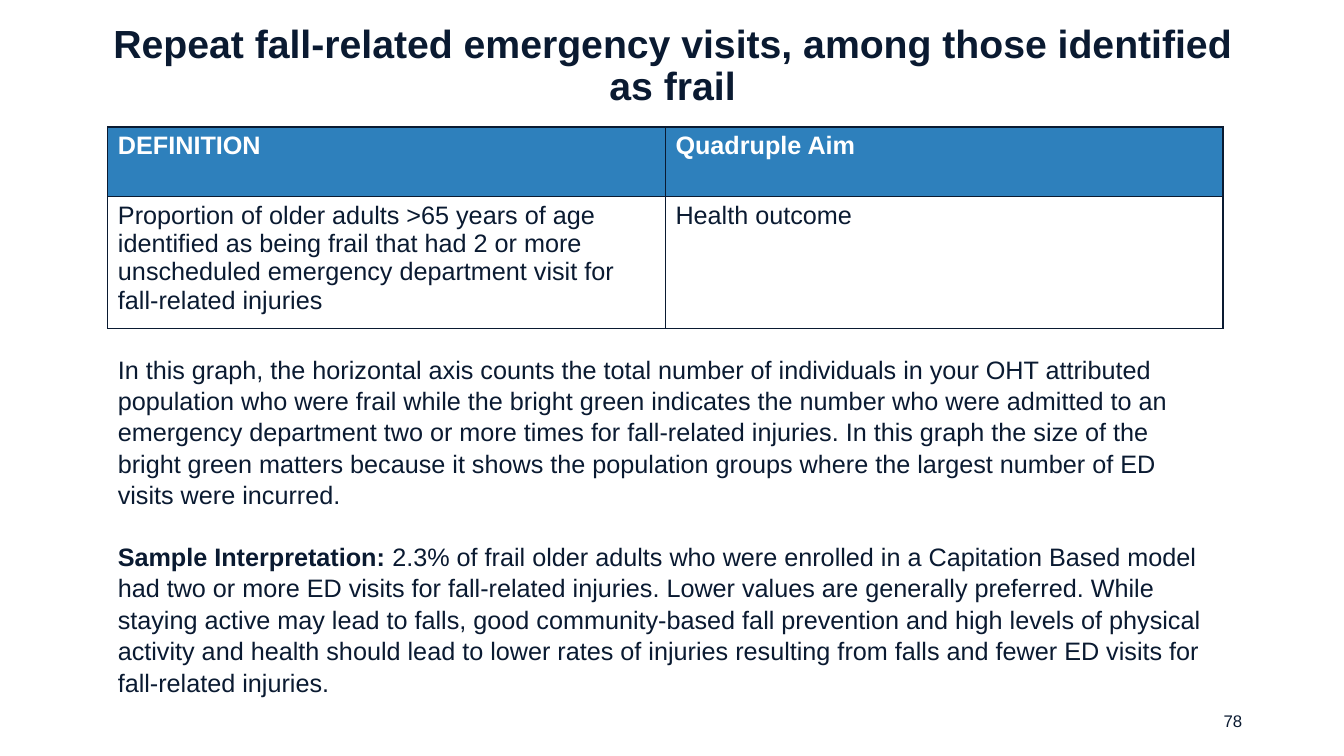
from lxml import etree
from pptx import Presentation
from pptx.dml.color import RGBColor
from pptx.enum.text import MSO_ANCHOR, PP_ALIGN
from pptx.oxml.ns import qn
from pptx.util import Inches, Pt

NAVY = RGBColor(0x0A, 0x1A, 0x31)
BLUE = RGBColor(0x2E, 0x80, 0xBC)
WHITE = RGBColor(0xFF, 0xFF, 0xFF)
MIDDLE, TOP = MSO_ANCHOR.MIDDLE, MSO_ANCHOR.TOP
LEFT, CENTER, RIGHT = PP_ALIGN.LEFT, PP_ALIGN.CENTER, PP_ALIGN.RIGHT
TITLE_ONLY = 5

TITLE = "Repeat fall-related emergency visits, among those identified as frail"
TABLE_ROWS = [
    ["DEFINITION", "Quadruple Aim"],
    [
        "Proportion of older adults >65 years of age identified as being frail that had "
        "2 or more unscheduled emergency department visit for fall-related injuries",
        "Health outcome",
    ],
]
EXPLANATION = [
    [(
        "In this graph, the horizontal axis counts the total number of individuals in your OHT attributed "
        "population who were frail while the bright green indicates the number who were admitted to an "
        "emergency department two or more times for fall-related injuries. In this graph the size of "
        "the bright green matters because it shows the population groups where the largest number of "
        "ED visits were incurred.", False)],
    [
        ("Sample Interpretation: ", True),
        (
            "2.3% of frail older adults who were enrolled in a Capitation Based model had two or more ED "
            "visits for fall-related injuries. Lower values are generally preferred. While staying active "
            "may lead to falls, good community-based fall prevention and high levels of physical activity "
            "and health should lead to lower rates of injuries resulting from falls and fewer ED visits "
            "for fall-related injuries.", False),
    ],
]


class SlideBuilder:
    font_name = "Arial"
    body_size = 18

    def __init__(self, slide):
        self.slide = slide

    def add_runs(self, paragraph, runs, size=body_size, color=NAVY, align=LEFT):
        paragraph.alignment = align
        for text, bold in runs:
            run = paragraph.add_run()
            run.text = text
            run.font.name = self.font_name
            run.font.size = Pt(size)
            run.font.bold = bold
            run.font.color.rgb = color

    def title(self, text, left, top, width, height):
        shape = self.slide.shapes.title
        shape.left, shape.top = Inches(left), Inches(top)
        shape.width, shape.height = Inches(width), Inches(height)
        frame = shape.text_frame
        frame.word_wrap = True
        frame.vertical_anchor = MIDDLE
        paragraph = frame.paragraphs[0]
        paragraph.line_spacing = 0.9
        self.add_runs(paragraph, [(text, True)], 28, align=CENTER)

    def text(self, paragraphs, left, top, width, height,
             size=body_size, align=LEFT, anchor=TOP, line_spacing=1.0, gap=0):
        shape = self.slide.shapes.add_textbox(Inches(left), Inches(top), Inches(width), Inches(height))
        frame = shape.text_frame
        frame.word_wrap = True
        frame.vertical_anchor = anchor
        for index, runs in enumerate(paragraphs):
            paragraph = frame.add_paragraph() if index else frame.paragraphs[0]
            paragraph.line_spacing = line_spacing
            if index:
                paragraph.space_before = Pt(gap)
            self.add_runs(paragraph, runs, size, align=align)

    def cell_borders(self, cell):
        properties = cell._tc.get_or_add_tcPr()
        for position, side in enumerate(("a:lnL", "a:lnR", "a:lnT", "a:lnB")):
            line = etree.Element(qn(side), w=str(Pt(1)))
            fill = etree.SubElement(line, qn("a:solidFill"))
            etree.SubElement(fill, qn("a:srgbClr"), val=str(NAVY))
            properties.insert(position, line)

    def table(self, rows, left, top, width, row_heights):
        frame = self.slide.shapes.add_table(
            len(rows), len(rows[0]), Inches(left), Inches(top), Inches(width), Inches(sum(row_heights)))
        table = frame.table
        for row_index, (texts, height) in enumerate(zip(rows, row_heights)):
            table.rows[row_index].height = Inches(height)
            header = row_index == 0
            for column_index, text in enumerate(texts):
                cell = table.cell(row_index, column_index)
                cell.fill.solid()
                cell.fill.fore_color.rgb = BLUE if header else WHITE
                self.cell_borders(cell)
                self.add_runs(cell.text_frame.paragraphs[0], [(text, header)],
                              color=WHITE if header else NAVY)


def main():
    presentation = Presentation()
    presentation.slide_width = Inches(13.33)
    presentation.slide_height = Inches(7.5)
    slide = presentation.slides.add_slide(presentation.slide_layouts[TITLE_ONLY])
    builder = SlideBuilder(slide)
    builder.title(TITLE, 0.77, 0.24, 11.8, 0.84)
    builder.table(TABLE_ROWS, 1.07, 1.26, 11.06, [0.69, 1.31])
    builder.text(EXPLANATION, 1.07, 3.45, 11.06, 3.43, line_spacing=1.04, gap=21.6)
    builder.text([[("78", False)]], 9.42, 6.95, 3, 0.4, size=12, align=RIGHT, anchor=MIDDLE)
    presentation.save("out.pptx")


if __name__ == "__main__":
    main()
